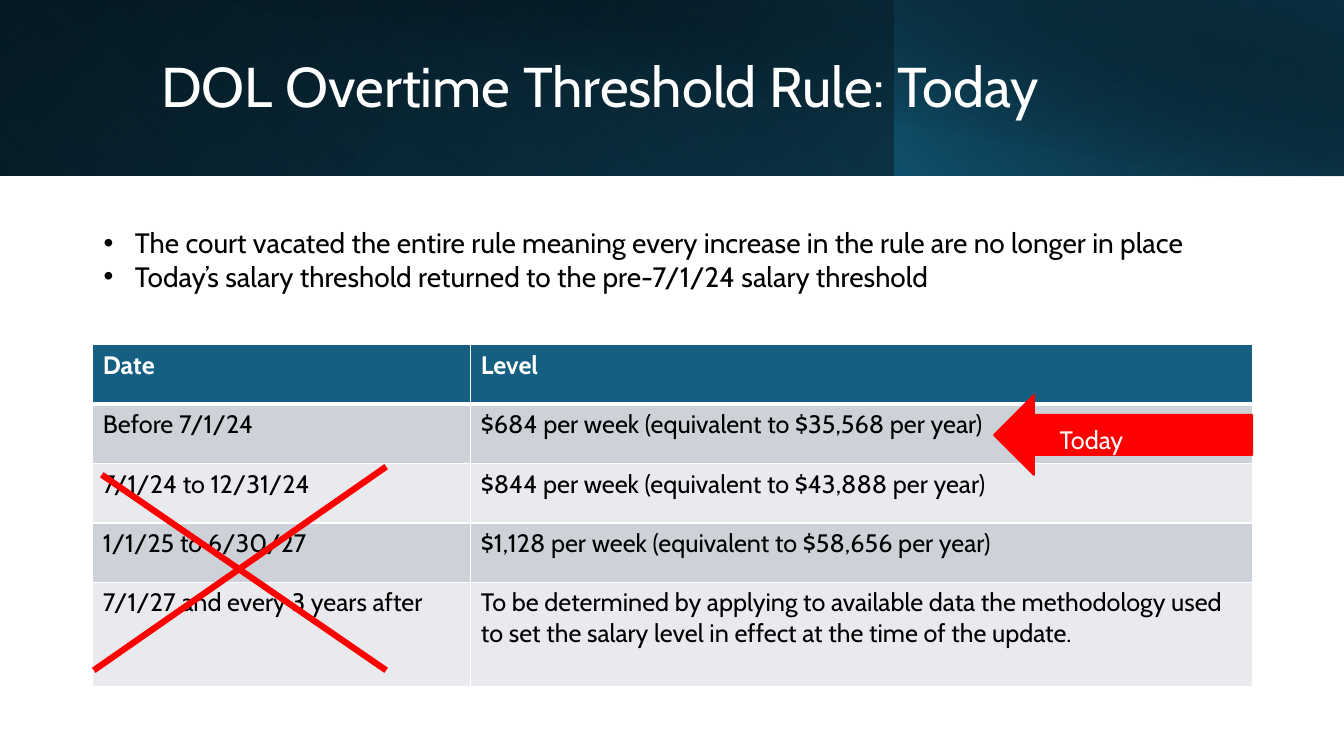
"""Build the overtime threshold slide with its banner, bullets, table and marks."""
from pptx import Presentation
from pptx.dml.color import RGBColor
from pptx.enum.shapes import MSO_CONNECTOR, MSO_SHAPE
from pptx.enum.text import MSO_ANCHOR as ANCHOR
from pptx.oxml import parse_xml
from pptx.oxml.ns import nsdecls, qn
from pptx.util import Inches, Pt

FONT = "Cabin"
WHITE = RGBColor(0xFF, 0xFF, 0xFF)
BLACK = RGBColor(0, 0, 0)
BLUE = RGBColor(0x15, 0x60, 0x82)
DEEP = RGBColor(0x10, 0x48, 0x62)
NAVY = RGBColor(0x0B, 0x30, 0x41)
RED = RGBColor(0xFF, 0, 0)
BANDS = [RGBColor(0xCC, 0xD2, 0xD8), RGBColor(0xE8, 0xEA, 0xED)]

TITLE = "DOL Overtime Threshold Rule: Today"
BULLETS = [
    "The court vacated the entire rule meaning every increase in the rule are no longer in place",
    "Today’s salary threshold returned to the pre-7/1/24 salary threshold",
]
ROWS = [
    ("Date", "Level"),
    ("Before 7/1/24", "$684 per week (equivalent to $35,568 per year)"),
    ("7/1/24 to 12/31/24", "$844 per week (equivalent to $43,888 per year)"),
    ("1/1/25 to 6/30/27", "$1,128 per week (equivalent to $58,656 per year)"),
    ("7/1/27 and every 3 years after",
     "To be determined by applying to available data the methodology used "
     "to set the salary level in effect at the time of the update."),
]
COL_WIDTHS = [3.75, 7.75]
ROW_HEIGHTS = [0.59] * 4 + [1.03]
BANNER = [
    ((0, 0, 13.33, 1.74), 40, [(0, BLACK, 100), (100, DEEP, 100)]),
    ((0, 0, 8.88, 1.74), 130, [(20, BLUE, 0), (100, NAVY, 55)]),
    ((8.87, 0, 4.46, 1.74), 320, [(0, BLUE, 66), (100, BLACK, 30)]),
    ((0.5, 0, 12.83, 1.75), 280, [(50, BLACK, 0), (99, NAVY, 52)]),
]
CROSS = [(1.01, 4.71, 3.83, 6.65), (0.93, 6.65, 3.83, 4.63)]


def inches(box):
    return [Inches(v) for v in box]


def write(tf, lines, size=18, color=BLACK, bold=False, bullet=False, spacing=None):
    for i, text in enumerate(lines):
        p = tf.paragraphs[0] if i == 0 else tf.add_paragraph()
        p.line_spacing = spacing
        if bullet:
            pPr = p._p.get_or_add_pPr()
            pPr.set("marL", str(Inches(0.31)))
            pPr.set("indent", str(-Inches(0.31)))
            pPr.append(parse_xml(f'<a:buFont {nsdecls("a")} typeface="Arial"/>'))
            pPr.append(parse_xml(f'<a:buChar {nsdecls("a")} char="•"/>'))
        r = p.add_run()
        r.text = text
        r.font.name = FONT
        r.font.size = Pt(size)
        r.font.bold = bold
        r.font.color.rgb = color


def add_text(s, box, lines, wrap=True, anchor=ANCHOR.TOP, **style):
    tf = s.shapes.add_textbox(*inches(box)).text_frame
    tf.word_wrap = wrap
    tf.vertical_anchor = anchor
    write(tf, lines, **style)


def add_gradient(s, box, angle, stops):
    sp = s.shapes.add_shape(MSO_SHAPE.RECTANGLE, *inches(box))
    sp.shadow.inherit = False
    sp.line.fill.background()
    sp.fill.background()
    gs = "".join(
        f'<a:gs pos="{pos * 1000}"><a:srgbClr val="{color}">'
        f'<a:alpha val="{alpha * 1000}"/></a:srgbClr></a:gs>'
        for pos, color, alpha in stops)
    spPr = sp._element.spPr
    spPr.replace(spPr.find(qn("a:noFill")), parse_xml(
        f'<a:gradFill {nsdecls("a")} rotWithShape="1"><a:gsLst>{gs}</a:gsLst>'
        f'<a:lin ang="{angle * 60000}" scaled="0"/></a:gradFill>'))


def set_borders(cell, widths):
    tcPr = cell._tc.get_or_add_tcPr()
    for i, (side, width) in enumerate(widths.items()):
        tcPr.insert(i, parse_xml(
            f'<a:ln{side} {nsdecls("a")} w="{Pt(width)}"><a:solidFill>'
            f'<a:srgbClr val="{WHITE}"/></a:solidFill></a:ln{side}>'))


def add_thresholds(s):
    table = s.shapes.add_table(
        len(ROWS), len(COL_WIDTHS),
        *inches((0.92, 3.42, sum(COL_WIDTHS), sum(ROW_HEIGHTS)))).table
    for column, width in zip(table.columns, COL_WIDTHS):
        column.width = Inches(width)
    for i, (row, height) in enumerate(zip(table.rows, ROW_HEIGHTS)):
        row.height = Inches(height)
        header = i == 0
        for cell, text in zip(row.cells, ROWS[i]):
            cell.fill.solid()
            cell.fill.fore_color.rgb = BLUE if header else BANDS[(i - 1) % 2]
            set_borders(cell, {"L": 1, "R": 1, "T": 3 if i == 1 else 1, "B": 3 if header else 1})
            write(cell.text_frame, [text], color=WHITE if header else BLACK, bold=header)


def add_arrow(s):
    sp = s.shapes.add_shape(MSO_SHAPE.LEFT_ARROW, *inches((9.86, 3.92, 2.56, 0.79)))
    sp.shadow.inherit = False
    sp.fill.solid()
    sp.fill.fore_color.rgb = RED
    sp.line.color.rgb = RED
    sp.line.width = Pt(1.5)


def add_stroke(s, ends):
    line = s.shapes.add_connector(MSO_CONNECTOR.STRAIGHT, *inches(ends))
    line.line.color.rgb = RED
    line.line.width = Pt(4.5)
    line._element.spPr.append(parse_xml(f'<a:effectLst {nsdecls("a")}/>'))


def main():
    prs = Presentation()
    prs.slide_width, prs.slide_height = inches((13.33, 7.5))
    s = prs.slides.add_slide(prs.slide_layouts[6])
    for box, angle, stops in BANNER:
        add_gradient(s, box, angle, stops)
    add_text(s, (1.5, 0.32, 10.82, 1.13), [TITLE], anchor=ANCHOR.MIDDLE,
             size=40, color=WHITE, spacing=0.9)
    add_thresholds(s)
    add_arrow(s)
    add_text(s, (10.41, 4.16, 1.91, 0.4), ["Today"], color=WHITE)
    add_text(s, (0.93, 2.19, 11.21, 0.77), BULLETS, wrap=False, size=20, bullet=True)
    for ends in CROSS:
        add_stroke(s, ends)
    prs.save("out.pptx")


if __name__ == "__main__":
    main()
